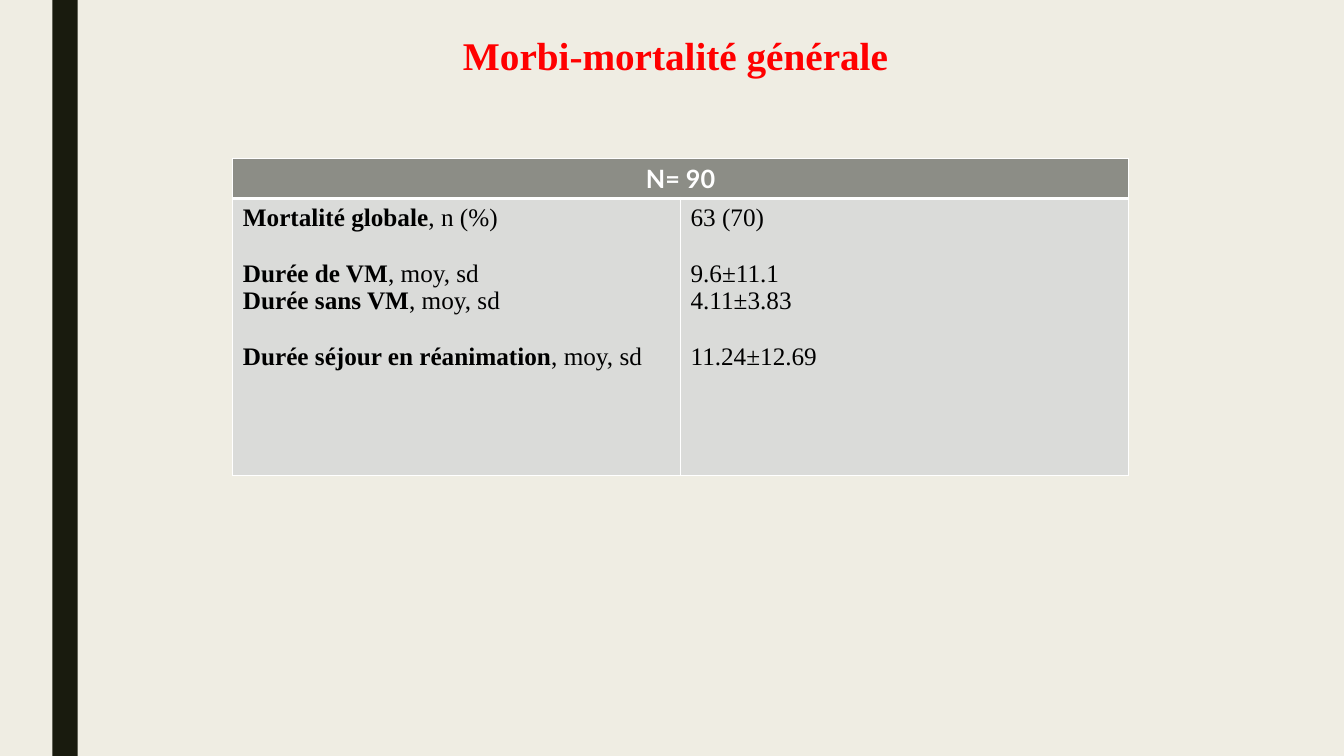
from dataclasses import dataclass

from lxml import etree
from pptx import Presentation
from pptx.dml.color import RGBColor
from pptx.enum.shapes import MSO_SHAPE
from pptx.enum.text import MSO_ANCHOR, PP_ALIGN
from pptx.oxml.ns import qn
from pptx.table import _Cell
from pptx.text.text import Font
from pptx.util import Inches, Pt

RECTANGLE = MSO_SHAPE.RECTANGLE
TOP = MSO_ANCHOR.TOP
CENTER = PP_ALIGN.CENTER

CREAM = RGBColor(0xEF, 0xED, 0xE3)
DARK_OLIVE = RGBColor(0x19, 0x1B, 0x0E)
RED = RGBColor(0xFF, 0x00, 0x00)
WHITE = RGBColor(0xFF, 0xFF, 0xFF)
BLACK = RGBColor(0x00, 0x00, 0x00)
HEADER_GREY = RGBColor(0x8C, 0x8D, 0x86)
BODY_GREY = RGBColor(0xDA, 0xDB, 0xD9)

SERIF = "Times New Roman"
SANS = "Lato"
GROUP_GAP = Pt(20)


@dataclass(frozen=True)
class Outcome:
    label: str
    unit: str
    value: str
    starts_group: bool = False


OUTCOMES = [
    Outcome("Mortalité globale", ", n (%)", "63 (70)"),
    Outcome("Durée de VM", ", moy, sd", "9.6±11.1", True),
    Outcome("Durée sans VM", ", moy, sd", "4.11±3.83"),
    Outcome("Durée séjour en réanimation", ", moy, sd", "11.24±12.69", True),
]


def set_font(font: Font, name: str, size: int, color: RGBColor, bold: bool) -> None:
    font.name = name
    font.size = Pt(size)
    font.color.rgb = color
    font.bold = bold


def style_cell(cell: _Cell, fill: RGBColor, top: int = 1, bottom: int = 1) -> None:
    """Fill the cell and give it white borders, with widths in points."""
    cell.fill.solid()
    cell.fill.fore_color.rgb = fill
    properties = cell._tc.get_or_add_tcPr()
    widths = {"a:lnL": 1, "a:lnR": 1, "a:lnT": top, "a:lnB": bottom}
    for position, (side, width) in enumerate(widths.items()):
        border = etree.Element(qn(side), w=str(Pt(width)))
        solid = etree.SubElement(border, qn("a:solidFill"))
        etree.SubElement(solid, qn("a:srgbClr"), val=str(WHITE))
        properties.insert(position, border)


def write_outcomes(cell: _Cell, texts: list[tuple[str, str]]) -> None:
    """Write one line per outcome, each a bold part and a regular part."""
    frame = cell.text_frame
    for index, (outcome, (bold_text, regular_text)) in enumerate(zip(OUTCOMES, texts)):
        line = frame.add_paragraph() if index else frame.paragraphs[0]
        if outcome.starts_group:
            line.space_before = GROUP_GAP
        set_font(line.font, SERIF, 18, BLACK, False)
        for text, bold in ((bold_text, True), (regular_text, False)):
            if text:
                run = line.add_run()
                run.text = text
                set_font(run.font, SERIF, 18, BLACK, bold)


def main() -> None:
    presentation = Presentation()
    presentation.slide_width = Inches(13.33)
    presentation.slide_height = Inches(7.5)
    slide = presentation.slides.add_slide(presentation.slide_layouts[6])
    slide.background.fill.solid()
    slide.background.fill.fore_color.rgb = CREAM

    side_band = slide.shapes.add_shape(
        RECTANGLE, Inches(0.52), 0, Inches(0.25), presentation.slide_height
    )
    side_band.shadow.inherit = False
    side_band.fill.solid()
    side_band.fill.fore_color.rgb = DARK_OLIVE
    side_band.line.fill.background()

    title = slide.shapes.add_textbox(
        Inches(1.5), Inches(0.32), Inches(10.4), Inches(0.85)
    ).text_frame
    title.word_wrap = True
    title.vertical_anchor = TOP
    heading = title.paragraphs[0]
    heading.text = "Morbi-mortalité générale"
    heading.alignment = CENTER
    heading.line_spacing = 0.89
    set_font(heading.font, SERIF, 28, RED, True)

    table = slide.shapes.add_table(
        2, 2, Inches(2.31), Inches(1.57), Inches(8.88), Inches(3.15)
    ).table
    table.rows[0].height = Inches(0.4)
    table.rows[1].height = Inches(2.75)

    for column in range(2):
        style_cell(table.cell(0, column), HEADER_GREY, bottom=3)
        style_cell(table.cell(1, column), BODY_GREY, top=3)
    sample_size = table.cell(0, 0)
    sample_size.merge(table.cell(0, 1))
    sample_line = sample_size.text_frame.paragraphs[0]
    sample_line.text = "N= 90"
    sample_line.alignment = CENTER
    set_font(sample_line.font, SANS, 18, WHITE, True)

    write_outcomes(table.cell(1, 0), [(o.label, o.unit) for o in OUTCOMES])
    write_outcomes(table.cell(1, 1), [("", o.value) for o in OUTCOMES])

    presentation.save("out.pptx")


if __name__ == "__main__":
    main()
